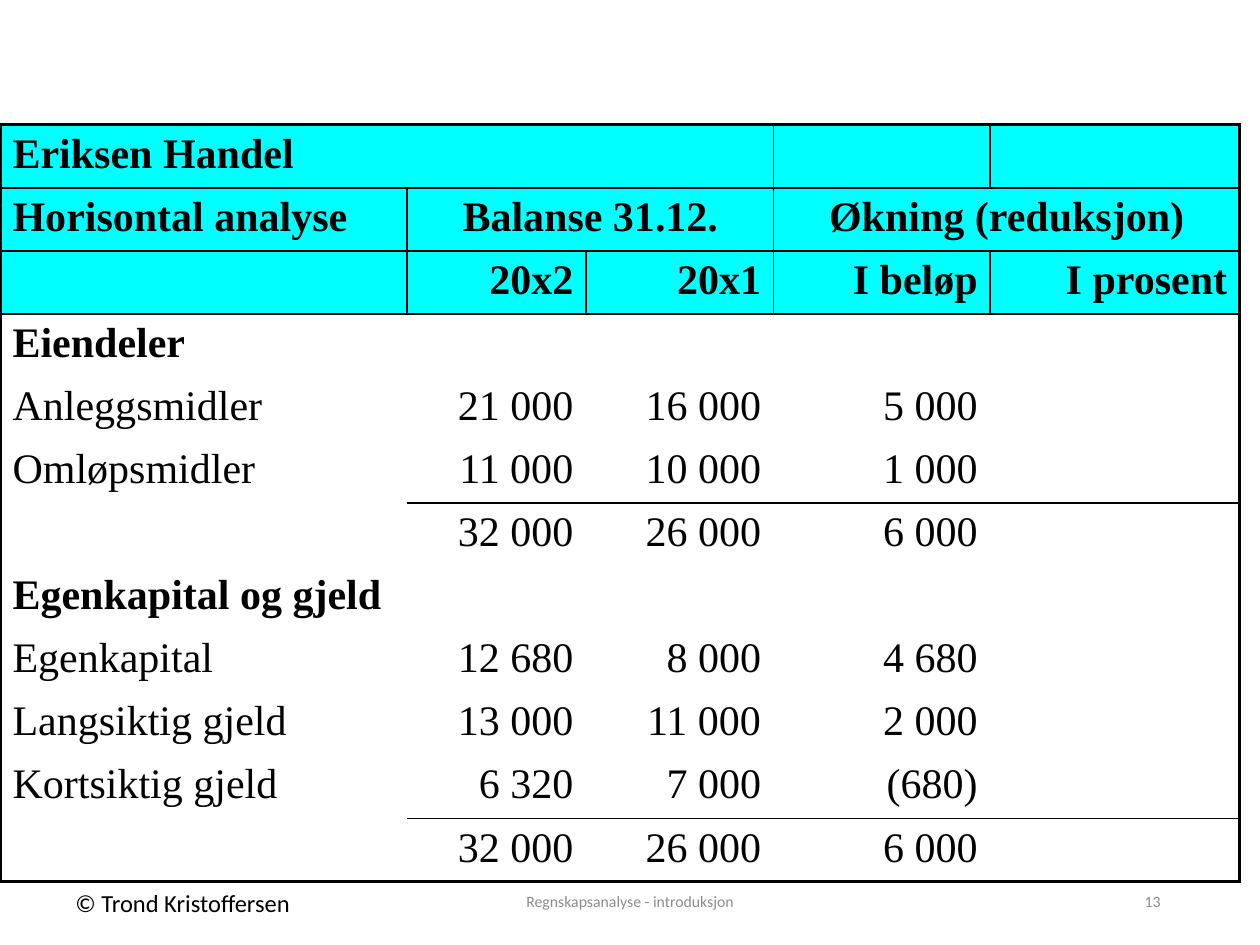
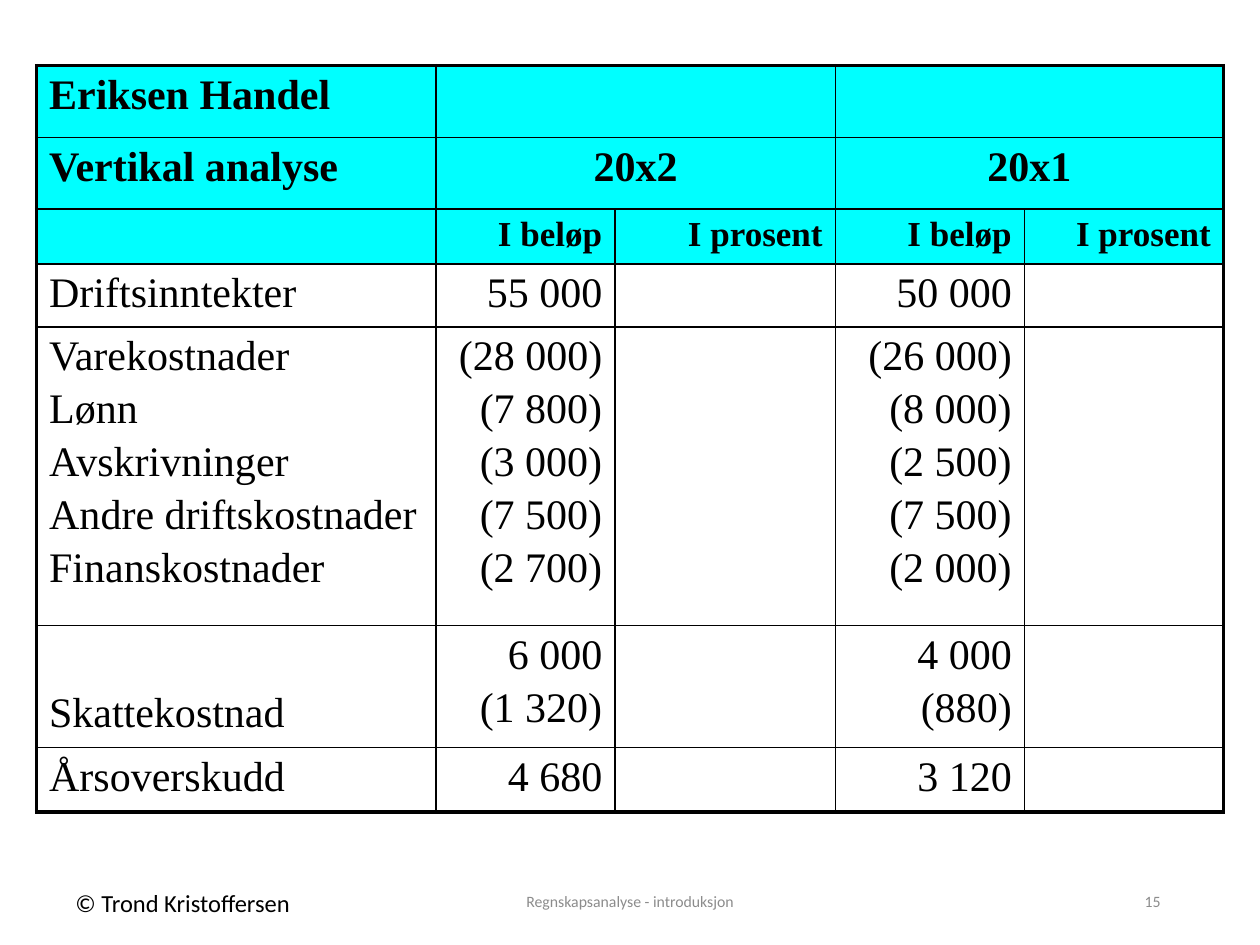
from dataclasses import dataclass

from lxml import etree
from pptx import Presentation
from pptx import util as u
from pptx.dml import color
from pptx.enum import text
from pptx.oxml import ns

COLORS = {"ink": "000000", "header": "00FFFF", "footer": "8C8C8C"}
TABLE_FONT = "Times New Roman"
FOOTER_FONT = "Calibri"
HEADER_ROWS = 3
OUTER, INNER, NONE = 2.25, 1, 0
LEFT, CENTER, RIGHT = text.PP_ALIGN.LEFT, text.PP_ALIGN.CENTER, text.PP_ALIGN.RIGHT


@dataclass(frozen=True)
class FooterText:
    box: tuple[float, float, float, float]
    size: int
    color: str
    alignment: text.PP_ALIGN
    frame_format: dict


@dataclass(frozen=True)
class AnalysisTable:
    page: str
    left: float
    top: float
    columns: tuple[float, ...]
    row_heights: tuple[float, ...]
    rows: tuple[tuple[str, ...], ...]
    spans: dict[tuple[int, int], int]
    full_grid: bool
    sum_rows: tuple[int, ...] = ()
    heading_rows: tuple[int, ...] = ()
    small_rows: tuple[int, ...] = ()
    bottom_labels: tuple[int, ...] = ()


COPYRIGHT = FooterText(
    (0.5, 7, 1.95, 0.33), 14, "ink", LEFT,
    {"word_wrap": False, "auto_size": text.MSO_AUTO_SIZE.SHAPE_TO_FIT_TEXT},
)
MIDDLE = {"word_wrap": True, "vertical_anchor": text.MSO_ANCHOR.MIDDLE}
TOPIC = FooterText((3.31, 6.95, 3.38, 0.4), 9, "footer", CENTER, MIDDLE)
PAGE_NUMBER = FooterText((7.06, 6.95, 2.25, 0.4), 9, "footer", RIGHT, MIDDLE)

HORIZONTAL = AnalysisTable(
    page="13",
    left=0,
    top=0.99,
    columns=(3.23, 1.42, 1.49, 1.72, 1.98),
    row_heights=(0.5,) * 12,
    rows=(
        ("Eriksen Handel", "", "", "", ""),
        ("Horisontal analyse", "Balanse 31.12.", "", "Økning (reduksjon)", ""),
        ("", "20x2", "20x1", "I beløp", "I prosent"),
        ("Eiendeler", "", "", "", ""),
        ("Anleggsmidler", "21 000", "16 000", "5 000", ""),
        ("Omløpsmidler", "11 000", "10 000", "1 000", ""),
        ("", "32 000", "26 000", "6 000", ""),
        ("Egenkapital og gjeld", "", "", "", ""),
        ("Egenkapital", "12 680", "8 000", "4 680", ""),
        ("Langsiktig gjeld", "13 000", "11 000", "2 000", ""),
        ("Kortsiktig gjeld", "6 320", "7 000", "(680)", ""),
        ("", "32 000", "26 000", "6 000", ""),
    ),
    spans={(0, 0): 3, (1, 1): 2, (1, 3): 2},
    full_grid=False,
    sum_rows=(6, 11),
    heading_rows=(3, 7),
)

VERTICAL = AnalysisTable(
    page="15",
    left=0.29,
    top=0.52,
    columns=(3.17, 1.42, 1.75, 1.5, 1.58),
    row_heights=(0.57, 0.57, 0.43, 0.5, 2.37, 0.97, 0.51),
    rows=(
        ("Eriksen Handel", "", "", "", ""),
        ("Vertikal analyse", "20x2", "", "20x1", ""),
        ("", "I beløp", "I prosent", "I beløp", "I prosent"),
        ("Driftsinntekter", "55 000", "", "50 000", ""),
        (
            "Varekostnader\nLønn\nAvskrivninger\nAndre driftskostnader\nFinanskostnader",
            "(28 000)\n(7 800)\n(3 000)\n(7 500)\n(2 700)", "",
            "(26 000)\n(8 000)\n(2 500)\n(7 500)\n(2 000)", "",
        ),
        ("Skattekostnad", "6 000\n(1 320)", "", "4 000\n(880)", ""),
        ("Årsoverskudd", "4 680", "", "3 120", ""),
    ),
    spans={(0, 1): 2, (0, 3): 2, (1, 1): 2, (1, 3): 2},
    full_grid=True,
    small_rows=(2,),
    bottom_labels=(5,),
)


def apply_format(target, values: dict) -> None:
    for name, value in values.items():
        setattr(target, name, value)


def format_font(font, name: str, size: float, color_name: str, bold: bool = False) -> None:
    apply_format(font, {"name": name, "size": u.Pt(size), "bold": bold})
    font.color.rgb = color.RGBColor.from_string(COLORS[color_name])


def add_footer_text(slide, style: FooterText, wording: str) -> None:
    shape = slide.shapes.add_textbox(*map(u.Inches, style.box))
    apply_format(shape.text_frame, style.frame_format)
    paragraph = shape.text_frame.paragraphs[0]
    paragraph.text = wording
    paragraph.alignment = style.alignment
    format_font(paragraph.font, FOOTER_FONT, style.size, style.color)


def row_line(spec_table: AnalysisTable, boundary: int, column: int) -> float:
    if boundary in (0, len(spec_table.rows)):
        return OUTER
    if spec_table.full_grid or boundary <= HEADER_ROWS:
        return INNER
    return INNER if boundary in spec_table.sum_rows and column > 0 else NONE


def column_line(spec_table: AnalysisTable, row: int, boundary: int) -> float:
    if boundary in (0, len(spec_table.columns)):
        return OUTER
    inside_span = any(
        row == span_row and start < boundary < start + width
        for (span_row, start), width in spec_table.spans.items()
    )
    if inside_span:
        return NONE
    return INNER if spec_table.full_grid or row < HEADER_ROWS else NONE


def draw_borders(cell, widths: dict[str, float]) -> None:
    properties = cell._tc.get_or_add_tcPr()
    for side, width in widths.items():
        line = etree.SubElement(properties, ns.qn(f"a:ln{side}"), w=str(int(u.Pt(width))))
        if width:
            fill = etree.SubElement(line, ns.qn("a:solidFill"))
            etree.SubElement(fill, ns.qn("a:srgbClr"), val=COLORS["ink"])
        else:
            etree.SubElement(line, ns.qn("a:noFill"))


def fill_cell(cell, analysis: AnalysisTable, row: int, column: int) -> None:
    end = column + analysis.spans.get((row, column), 1)
    draw_borders(cell, {
        "L": column_line(analysis, row, column),
        "R": column_line(analysis, row, end),
        "T": row_line(analysis, row, column),
        "B": row_line(analysis, row + 1, column),
    })
    if row < HEADER_ROWS:
        cell.fill.solid()
        cell.fill.fore_color.rgb = color.RGBColor.from_string(COLORS["header"])
    else:
        cell.fill.background()
    if column == 0 and row in analysis.bottom_labels:
        apply_format(cell, {
            "vertical_anchor": text.MSO_ANCHOR.BOTTOM, "margin_bottom": u.Inches(0.09),
        })
    wording = analysis.rows[row][column]
    if not wording:
        return
    cell.text = wording
    bold = row < HEADER_ROWS or row in analysis.heading_rows
    size = 20 if row in analysis.small_rows else 24
    alignment = LEFT if column == 0 else CENTER if end > column + 1 else RIGHT
    for index, paragraph in enumerate(cell.text_frame.paragraphs):
        paragraph.alignment = alignment
        if index:
            paragraph.space_before = u.Pt(3.7)
        for run in paragraph.runs:
            format_font(run.font, TABLE_FONT, size, "ink", bold)


def add_analysis_table(slide, analysis: AnalysisTable) -> None:
    table = slide.shapes.add_table(
        len(analysis.rows), len(analysis.columns),
        u.Inches(analysis.left), u.Inches(analysis.top),
        u.Inches(sum(analysis.columns)), u.Inches(sum(analysis.row_heights)),
    ).table
    apply_format(table, {"first_row": False, "horz_banding": False})
    for column, width in zip(table.columns, analysis.columns):
        column.width = u.Inches(width)
    for row, height in zip(table.rows, analysis.row_heights):
        row.height = u.Inches(height)
    for (row, column), width in analysis.spans.items():
        table.cell(row, column).merge(table.cell(row, column + width - 1))
    for row in range(len(analysis.rows)):
        for column in range(len(analysis.columns)):
            fill_cell(table.cell(row, column), analysis, row, column)


def add_analysis_slide(presentation, analysis: AnalysisTable) -> None:
    slide = presentation.slides.add_slide(presentation.slide_layouts[6])
    add_footer_text(slide, COPYRIGHT, "© Trond Kristoffersen")
    add_footer_text(slide, TOPIC, "Regnskapsanalyse - introduksjon")
    add_footer_text(slide, PAGE_NUMBER, analysis.page)
    add_analysis_table(slide, analysis)


def main() -> None:
    presentation = Presentation()
    apply_format(presentation, {"slide_width": u.Inches(10), "slide_height": u.Inches(7.5)})
    for analysis in (HORIZONTAL, VERTICAL):
        add_analysis_slide(presentation, analysis)
    presentation.save("out.pptx")


if __name__ == "__main__":
    main()
